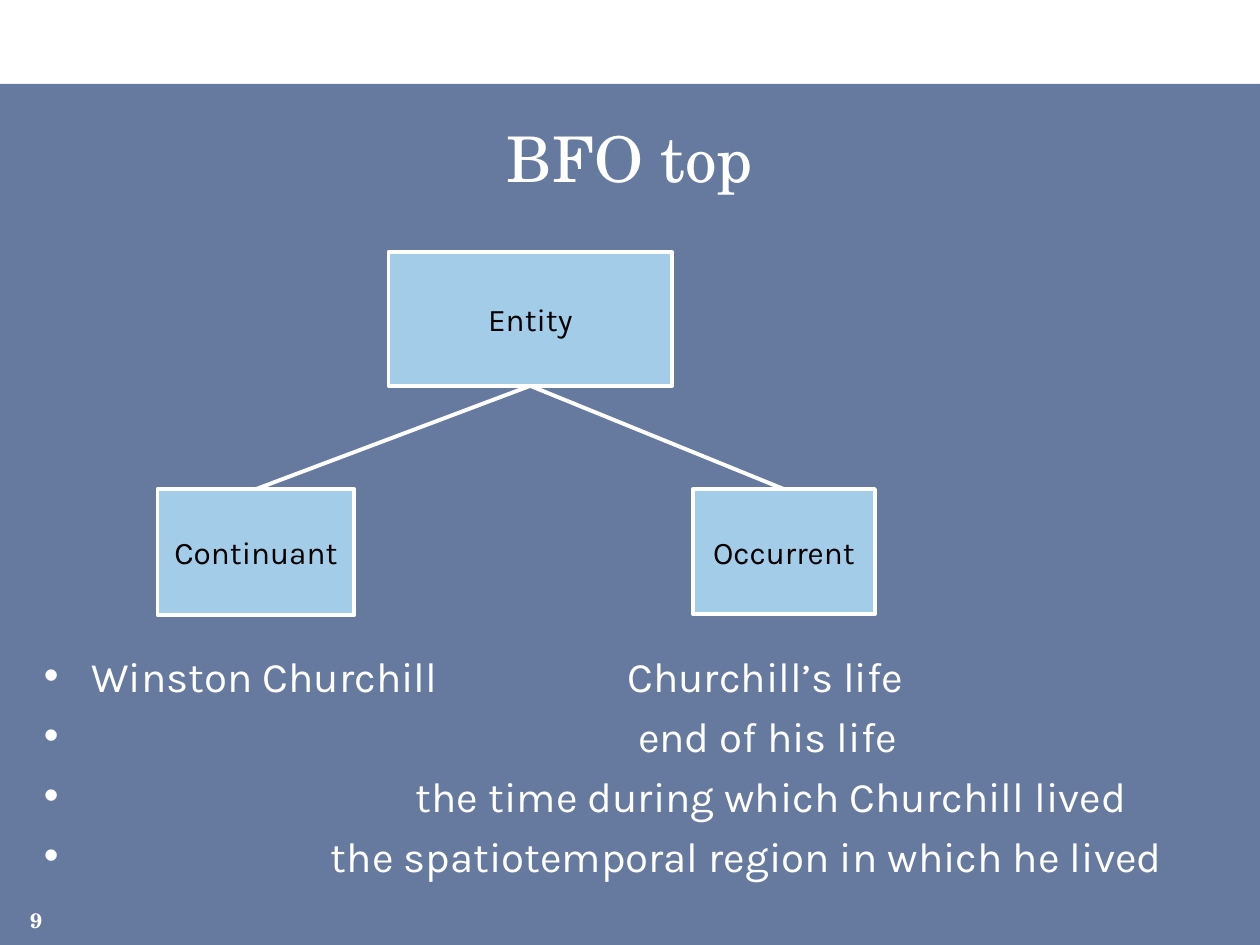
from dataclasses import dataclass

from lxml.etree import SubElement
from pptx import Presentation
from pptx.dml.color import RGBColor
from pptx.enum.shapes import MSO_CONNECTOR, MSO_SHAPE
from pptx.enum.text import MSO_ANCHOR, PP_ALIGN
from pptx.oxml.ns import qn
from pptx.shapes.autoshape import Shape
from pptx.slide import Slide
from pptx.text.text import _Paragraph as Paragraph
from pptx.util import Pt


@dataclass(frozen=True)
class Theme:
    white: RGBColor = RGBColor(0xFF, 0xFF, 0xFF)
    black: RGBColor = RGBColor(0x00, 0x00, 0x00)
    navy: RGBColor = RGBColor(0x00, 0x20, 0x60)
    light_blue: RGBColor = RGBColor(0xA2, 0xCC, 0xE8)
    panel_opacity: int = 60
    heading_font: str = "TeX Gyre Schola"
    body_font: str = "Karla"
    title_size: float = 36
    body_size: float = 24
    node_size: float = 18
    number_size: float = 12
    line_width: float = 2.25


@dataclass(frozen=True)
class Node:
    label: str
    left: float
    top: float
    width: float
    height: float

    @property
    def center(self) -> float:
        return self.left + self.width / 2

    @property
    def bottom(self) -> float:
        return self.top + self.height


@dataclass(frozen=True)
class Example:
    text: str
    indent: float
    tab: float = 0


THEME = Theme()
ENTITY = Node("Entity", 222, 144, 162, 76.5)
CHILDREN = (
    Node("Continuant", 90, 279.5, 112.5, 72),
    Node("Occurrent", 396, 279.5, 104, 71.5),
)
EXAMPLES = (
    Example("Winston Churchill\tChurchill’s life", 27, 333.5),
    Example("end of his life", 339.5),
    Example("the time during which Churchill lived", 212.5),
    Example("the spatiotemporal region in which he lived", 164),
)


def style_text(paragraph: Paragraph, font: str, size: float, color: RGBColor) -> None:
    paragraph.font.name = font
    paragraph.font.size = Pt(size)
    paragraph.font.color.rgb = color


def add_panel(slide: Slide) -> None:
    panel = slide.shapes.add_shape(MSO_SHAPE.RECTANGLE, 0, Pt(48), Pt(720), Pt(492))
    panel.shadow.inherit = False
    panel.line.fill.background()
    panel.fill.solid()
    panel.fill.fore_color.rgb = THEME.navy
    color = panel.fill._xPr.find(f"{qn('a:solidFill')}/{qn('a:srgbClr')}")
    SubElement(color, qn("a:alpha"), val=str(THEME.panel_opacity * 1000))
    # The panel goes behind the title placeholder.
    slide.shapes._spTree.insert(2, panel._element)


def set_title(slide: Slide, text: str) -> None:
    title = slide.shapes.title
    title.left, title.top, title.width, title.height = Pt(18), Pt(60), Pt(684), Pt(60)
    title.text_frame.text = text
    paragraph = title.text_frame.paragraphs[0]
    paragraph.alignment = PP_ALIGN.CENTER
    style_text(paragraph, THEME.heading_font, THEME.title_size, THEME.white)


def add_bullet(paragraph: Paragraph, example: Example) -> None:
    """Hang the text at the example's indent, with the bullet at the left edge."""
    properties = paragraph._p.get_or_add_pPr()
    properties.set("marL", str(Pt(example.indent)))
    properties.set("indent", str(-Pt(example.indent)))
    SubElement(properties, qn("a:buFont"), typeface="Arial")
    SubElement(properties, qn("a:buChar"), char="•")
    if example.tab:
        tabs = SubElement(properties, qn("a:tabLst"))
        SubElement(tabs, qn("a:tab"), pos=str(Pt(example.tab)), algn="l")


def add_examples(slide: Slide) -> None:
    box = slide.shapes.add_textbox(Pt(18), Pt(368), Pt(708), Pt(154))
    frame = box.text_frame
    frame.word_wrap = True
    for index, example in enumerate(EXAMPLES):
        paragraph = frame.add_paragraph() if index else frame.paragraphs[0]
        paragraph.text = example.text
        add_bullet(paragraph, example)
        if index:
            paragraph.space_before = Pt(5.5)
        style_text(paragraph, THEME.body_font, THEME.body_size, THEME.white)


def add_slide_number(slide: Slide, number: str) -> None:
    frame = slide.shapes.add_textbox(0, Pt(510), Pt(24), Pt(23)).text_frame
    frame.margin_left = frame.margin_right = frame.margin_top = frame.margin_bottom = 0
    frame.word_wrap = True
    frame.vertical_anchor = MSO_ANCHOR.BOTTOM
    paragraph = frame.paragraphs[0]
    paragraph.text = number
    paragraph.alignment = PP_ALIGN.RIGHT
    style_text(paragraph, THEME.heading_font, THEME.number_size, THEME.white)
    paragraph.font.bold = True


def add_node(slide: Slide, node: Node) -> Shape:
    shape = slide.shapes.add_shape(
        MSO_SHAPE.RECTANGLE, Pt(node.left), Pt(node.top), Pt(node.width), Pt(node.height)
    )
    shape.shadow.inherit = False
    shape.fill.solid()
    shape.fill.fore_color.rgb = THEME.light_blue
    shape.line.color.rgb = THEME.white
    shape.line.width = Pt(THEME.line_width)
    frame = shape.text_frame
    frame.word_wrap = False
    frame.vertical_anchor = MSO_ANCHOR.MIDDLE
    paragraph = frame.paragraphs[0]
    paragraph.text = node.label
    paragraph.alignment = PP_ALIGN.CENTER
    style_text(paragraph, THEME.body_font, THEME.node_size, THEME.black)
    return shape


def add_branch(slide: Slide, parent: Node, child: Node) -> None:
    branch = slide.shapes.add_connector(
        MSO_CONNECTOR.STRAIGHT,
        Pt(parent.center), Pt(parent.bottom), Pt(child.center), Pt(child.top),
    )
    branch.line.color.rgb = THEME.white
    branch.line.width = Pt(THEME.line_width)
    SubElement(branch._element.spPr, qn("a:effectLst"))


def main() -> None:
    presentation = Presentation()
    presentation.slide_width, presentation.slide_height = Pt(720), Pt(540)
    slide = presentation.slides.add_slide(presentation.slide_layouts[5])
    add_panel(slide)
    set_title(slide, "BFO top")
    add_examples(slide)
    add_slide_number(slide, "9")
    for node in (ENTITY, *CHILDREN):
        add_node(slide, node)
    for child in CHILDREN:
        add_branch(slide, ENTITY, child)
    presentation.save("out.pptx")


if __name__ == "__main__":
    main()
